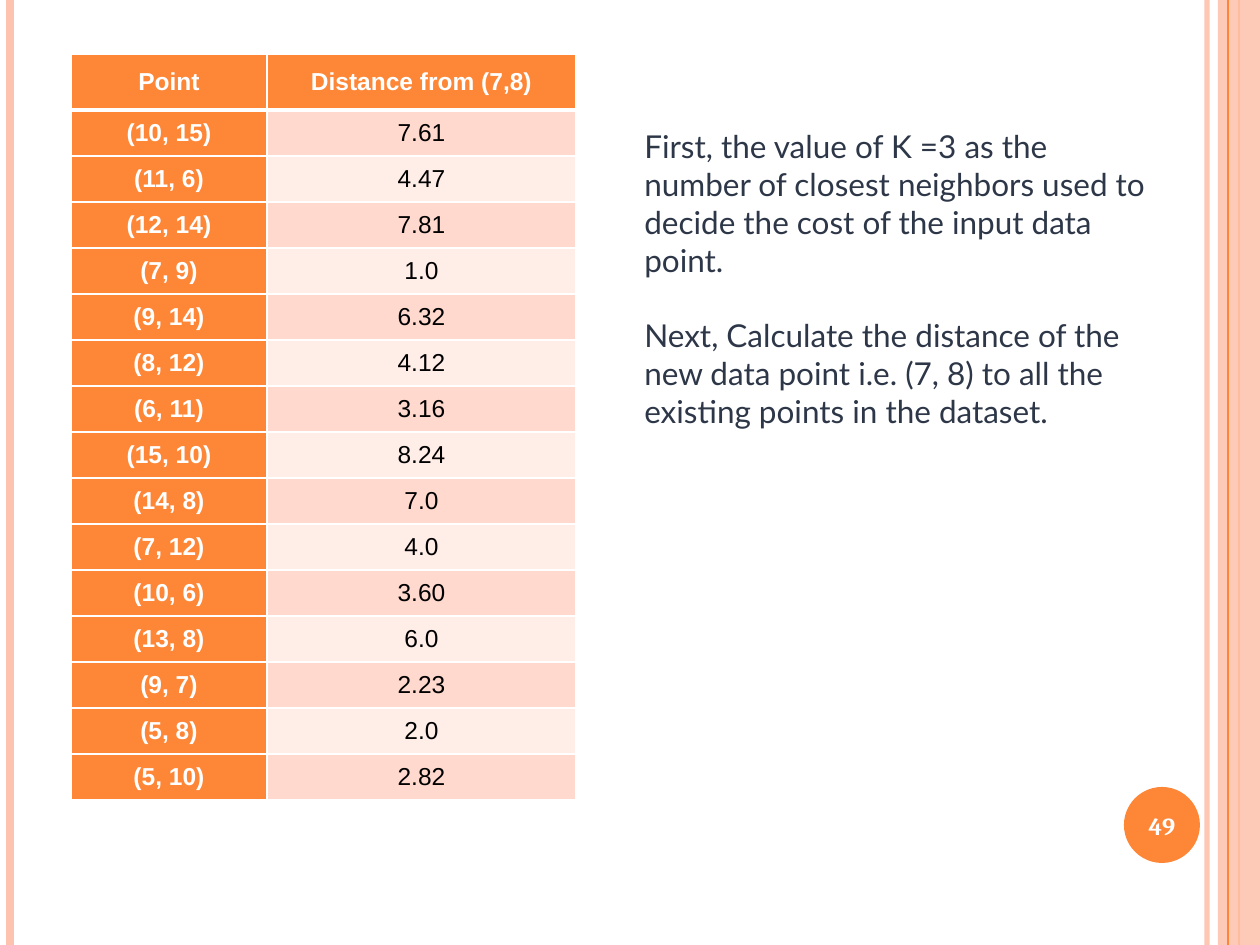
from dataclasses import dataclass

from lxml.etree import SubElement
from pptx import Presentation
from pptx.dml.color import RGBColor
from pptx.enum.shapes import MSO_CONNECTOR, MSO_SHAPE
from pptx.enum.text import MSO_ANCHOR, MSO_AUTO_SIZE, PP_ALIGN
from pptx.oxml.ns import qn
from pptx.util import Pt

SCALE = 914400 / 126
W, H = 1260, 945


@dataclass(frozen=True)
class Theme:
    accent: str = "FE8637"
    pale: str = "FEC3AE"
    band_dark: str = "FFD9CE"
    band_light: str = "FFEDE8"
    ink: str = "2D3748"
    black: str = "000000"
    white: str = "FFFFFF"
    table_font: str = "Arial"
    body_font: str = "Lato"
    number_font: str = "Cambria"
    small: int = 14
    body: int = 18


T = Theme()

HEADER = ("Point", "Distance from (7,8)")
DISTANCES = [
    ("(10, 15)", "7.61"), ("(11, 6)", "4.47"), ("(12, 14)", "7.81"),
    ("(7, 9)", "1.0"), ("(9, 14)", "6.32"), ("(8, 12)", "4.12"),
    ("(6, 11)", "3.16"), ("(15, 10)", "8.24"), ("(14, 8)", "7.0"),
    ("(7, 12)", "4.0"), ("(10, 6)", "3.60"), ("(13, 8)", "6.0"),
    ("(9, 7)", "2.23"), ("(5, 8)", "2.0"), ("(5, 10)", "2.82"),
]
STEPS = [
    "First, the value of K =3 as the number of closest neighbors used to "
    "decide the cost of the input data point.",
    "Next, Calculate the distance of the new data point i.e. (7, 8) to all "
    "the existing points in the dataset.",
]


def px(*values):
    return [round(v * SCALE) for v in values]


def rgb(color):
    return RGBColor.from_string(color)


def set_attrs(obj, **values):
    for name, value in values.items():
        setattr(obj, name, value)


def write(p, text, font, size, color, bold=False):
    r = p.add_run()
    r.text = text
    set_attrs(r.font, name=font, size=Pt(size), bold=bold)
    r.font.color.rgb = rgb(color)


def set_alpha(fill_parent, percent):
    """Make the solid fill found under an element partly transparent."""
    color = next(fill_parent.iter(qn("a:srgbClr")))
    SubElement(color, qn("a:alpha"), val=str(percent * 1000))


def add_rule(s, x, color, width, alpha=100):
    """Draw a vertical line over the whole slide height."""
    line = s.shapes.add_connector(MSO_CONNECTOR.STRAIGHT, *px(x, 0, x, H))
    line.line.color.rgb = rgb(color)
    line.line.width = Pt(width)
    sp_pr = line._element.spPr
    if alpha < 100:
        set_alpha(sp_pr, alpha)
    SubElement(sp_pr, qn("a:effectLst"))


def add_plain_shape(s, kind, box, color):
    sp = s.shapes.add_shape(kind, *px(*box))
    sp.shadow.inherit = False
    sp.fill.solid()
    sp.fill.fore_color.rgb = rgb(color)
    sp.line.fill.background()
    return sp


def add_frame(s):
    add_rule(s, 1207, T.pale, 3, alpha=93)
    add_rule(s, 10, T.pale, 4.5)
    add_rule(s, 1239, T.accent, 1.5)
    band = add_plain_shape(s, MSO_SHAPE.RECTANGLE, (1218, 0, W - 1218, H), T.pale)
    set_alpha(band._element.spPr, 87)
    add_rule(s, 1228, T.accent, 0.75)


def add_text_box(s, box, **frame_format):
    tf = s.shapes.add_textbox(*px(*box)).text_frame
    set_attrs(tf, word_wrap=True, **frame_format)
    return tf


def add_page_number(s, box, number):
    x, y, w, h = box
    add_plain_shape(s, MSO_SHAPE.OVAL, box, T.accent)
    tf = add_text_box(s, (x - 4, y + 3, w + 8, h - 4),
                      vertical_anchor=MSO_ANCHOR.MIDDLE)
    p = tf.paragraphs[0]
    p.alignment = PP_ALIGN.CENTER
    write(p, number, T.number_font, T.small, T.white, bold=True)


def add_borders(cell, **widths):
    """Give the cell white borders; widths in points are keyed by L, R, T, B."""
    tc_pr = cell._tc.get_or_add_tcPr()
    for side, width in widths.items():
        ln = SubElement(tc_pr, qn(f"a:ln{side}"), w=str(Pt(width)))
        fill = SubElement(ln, qn("a:solidFill"))
        SubElement(fill, qn("a:srgbClr"), val=T.white)


def add_distance_table(s, box, col_widths, header_height):
    rows = [HEADER, *DISTANCES]
    table = s.shapes.add_table(len(rows), len(HEADER), *px(*box)).table
    for col, width in zip(table.columns, px(*col_widths)):
        col.width = width
    row_height = (box[3] - header_height) // len(DISTANCES)
    heights = [header_height] + [row_height] * len(DISTANCES)
    for row, height in zip(table.rows, px(*heights)):
        row.height = height

    margin, = px(9)
    for i, values in enumerate(rows):
        for j, text in enumerate(values):
            strong = i == 0 or j == 0
            band = T.band_dark if i % 2 else T.band_light
            cell = table.cell(i, j)
            set_attrs(cell, vertical_anchor=MSO_ANCHOR.MIDDLE,
                      margin_left=margin, margin_right=margin,
                      margin_top=margin, margin_bottom=margin)
            add_borders(cell, L=1, R=1, T=3 if i == 1 else 1, B=3 if i == 0 else 1)
            cell.fill.solid()
            cell.fill.fore_color.rgb = rgb(T.accent if strong else band)
            p = cell.text_frame.paragraphs[0]
            p.alignment = PP_ALIGN.CENTER
            write(p, text, T.table_font, T.small,
                  T.white if strong else T.black, bold=strong)


def add_steps(s, box):
    tf = add_text_box(s, box, auto_size=MSO_AUTO_SIZE.SHAPE_TO_FIT_TEXT)
    for i, text in enumerate(STEPS):
        p = tf.add_paragraph() if i else tf.paragraphs[0]
        if i:
            p.space_before = Pt(T.body * 1.2)
        write(p, text, T.body_font, T.body, T.ink)


def main():
    prs = Presentation()
    prs.slide_width, prs.slide_height = px(W, H)
    s = prs.slides.add_slide(prs.slide_layouts[6])
    add_frame(s)
    add_distance_table(s, (71, 54, 505, 746), (196, 309), 56)
    add_page_number(s, (1124, 787, 76, 76), "49")
    add_steps(s, (632, 121, 532, 317))
    prs.save("out.pptx")


if __name__ == "__main__":
    main()
